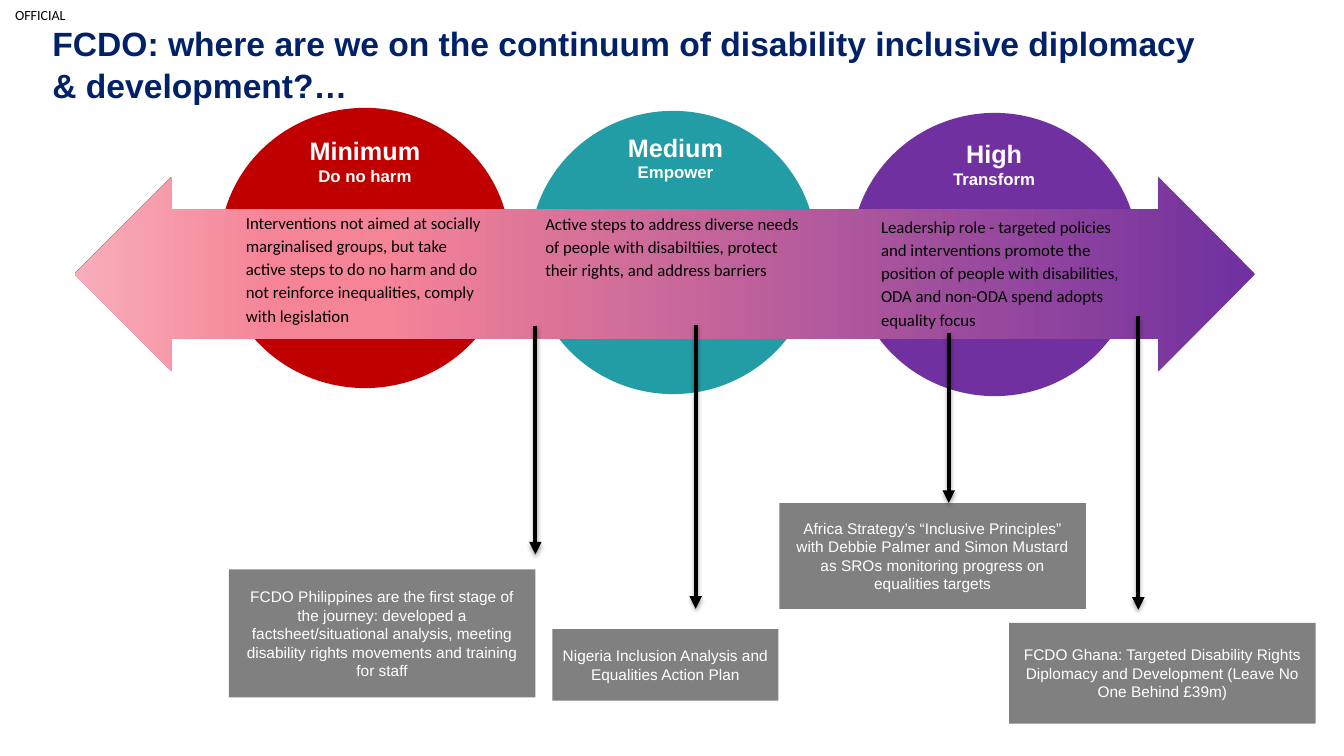
from dataclasses import dataclass

from lxml import etree
from pptx import Presentation
from pptx import util as u
from pptx.dml import color
from pptx.enum import shapes, text
from pptx.oxml import ns


@dataclass(frozen=True)
class Theme:
    navy: str = "012169"
    black: str = "000000"
    white: str = "FFFFFF"
    grey: str = "808080"
    red: str = "C00000"
    teal: str = "229DA6"
    purple: str = "7030A0"
    arrow_stops: tuple = ((0, "7030A0"), (74, "F58497"), (83, "F58497"), (100, "F8ADBA"))
    heading_font: str = "Arial"
    body_font: str = "Calibri"
    title_size: int = 24
    stage_size: int = 18
    body_size: int = 12
    example_size: int = 11
    marking_size: int = 10


@dataclass(frozen=True)
class Box:
    left: float
    top: float
    width: float
    height: float

    def inner(self, left, top, width, height):
        """Return a box whose offset is measured from this box."""
        return Box(self.left + left, self.top + top, width, height)

    def lengths(self):
        return [u.Inches(v) for v in (self.left, self.top, self.width, self.height)]


THEME = Theme()

# Name, aim, colour, circle, heading position, caption box, caption
STAGES = [
    ("Minimum", "Do no harm", THEME.red, (1.44, 0, 2.88, 2.78), (2.01, 0.22),
     (1.6, 0.96, 2.57, 1.35),
     "Interventions not aimed at socially marginalised groups, but take active steps "
     "to do no harm and do not reinforce inequalities, comply with legislation"),
    ("Medium", "Empower", THEME.teal, (4.51, 0.03, 2.85, 2.81), (5.09, 0.19),
     (4.57, 0.97, 2.85, 1.51),
     "Active steps to address diverse needs of people with disabiltiies, "
     "protect their rights, and address barriers"),
    ("High", "Transform", THEME.purple, (7.7, 0.05, 2.85, 2.81), (8.25, 0.25),
     (7.9, 1, 2.76, 1.58),
     "Leadership role - targeted policies and interventions promote the position of "
     "people with disabilities, ODA and non-ODA spend adopts equality focus"),
]

# Text, box, arrow x, arrow start, arrow end
EXAMPLES = [
    ("FCDO Philippines are the first stage of the journey: developed a "
     "factsheet/situational analysis, meeting disability rights movements and "
     "training for staff", (0, 2.51, 3.04, 1.27), 3.04, 0.09, 2.36),
    ("Nigeria Inclusion Analysis and Equalities Action Plan",
     (3.21, 3.1, 2.24, 0.71), 4.63, 0.08, 2.9),
    ("Africa Strategy’s “Inclusive Principles” with Debbie Palmer and Simon Mustard "
     "as SROs monitoring progress on equalities targets",
     (5.46, 1.85, 3.04, 1.05), 7.14, 0.16, 1.85),
    ("FCDO Ghana: Targeted Disability Rights Diplomacy and Development "
     "(Leave No One Behind £39m)", (7.74, 3.04, 3.04, 1), 9.02, 0, 2.91),
]


def rgb(value):
    return color.RGBColor.from_string(value)


def add_xml(parent, tag, **attributes):
    return etree.SubElement(parent, ns.qn(tag), {k: str(v) for k, v in attributes.items()})


def write_text(shape, lines, *, sizes, colour, font=THEME.heading_font, bold=False,
               align=text.PP_ALIGN.LEFT, anchor=text.MSO_ANCHOR.TOP, inset=None,
               wrap=True, line_spacing=None, space_after=None):
    frame = shape.text_frame
    frame.text = "\n".join(lines)
    frame.word_wrap = wrap
    frame.vertical_anchor = anchor
    if inset is not None:
        frame.margin_left = frame.margin_right = u.Inches(inset)
        frame.margin_top = frame.margin_bottom = u.Inches(inset)
    for paragraph, size in zip(frame.paragraphs, sizes):
        paragraph.alignment = align
        if line_spacing is not None:
            paragraph.line_spacing = line_spacing
        if space_after is not None:
            paragraph.space_after = u.Pt(space_after)
        paragraph.font.name = font
        paragraph.font.size = u.Pt(size)
        paragraph.font.bold = bold
        paragraph.font.color.rgb = rgb(colour)


def add_text(slide, box, lines, **text_format):
    write_text(slide.shapes.add_textbox(*box.lengths()), lines, **text_format)


def add_plain_shape(slide, kind, box, fill=None):
    shape = slide.shapes.add_shape(kind, *box.lengths())
    shape.shadow.inherit = False
    shape.line.fill.background()
    if fill:
        shape.fill.solid()
        shape.fill.fore_color.rgb = rgb(fill)
    return shape


def add_down_arrow(slide, x, start, end):
    arrow = slide.shapes.add_connector(
        shapes.MSO_CONNECTOR.STRAIGHT, u.Inches(x), u.Inches(start), u.Inches(x), u.Inches(end))
    arrow.line.color.rgb = rgb(THEME.black)
    arrow.line.width = u.Pt(3)
    properties = arrow._element.spPr
    add_xml(properties.find(ns.qn("a:ln")), "a:tailEnd", type="triangle")
    shadow = add_xml(add_xml(properties, "a:effectLst"), "a:outerShdw",
                     blurRad=u.Pt(3.1), dist=u.Pt(1.8), dir=90 * 60000, rotWithShape=0)
    add_xml(add_xml(shadow, "a:srgbClr", val=THEME.black), "a:alpha", val=35000)


def add_continuum_arrow(slide, box):
    arrow = add_plain_shape(slide, shapes.MSO_SHAPE.LEFT_RIGHT_ARROW, box)
    arrow.adjustments[0] = 0.67
    arrow.adjustments[1] = 0.5
    arrow.fill.gradient()
    arrow.fill.gradient_angle = 180
    stops = arrow._element.spPr.find(".//" + ns.qn("a:gsLst"))
    stops.clear()
    for position, value in THEME.arrow_stops:
        add_xml(add_xml(stops, "a:gs", pos=position * 1000), "a:srgbClr", val=value)


def draw_header(slide, box):
    add_text(slide, box.inner(0, 0, 0.8, 0.29), ["OFFICIAL"], sizes=[THEME.marking_size],
             colour=THEME.black, font=THEME.body_font, inset=0, wrap=False,
             align=text.PP_ALIGN.CENTER, anchor=text.MSO_ANCHOR.MIDDLE)
    add_text(slide, box.inner(0.52, 0.2, 11.5, 0.9),
             ["FCDO: where are we on the continuum of disability inclusive diplomacy "
              "& development?…"],
             sizes=[THEME.title_size], colour=THEME.navy, bold=True, inset=0,
             line_spacing=1.06)


def draw_continuum(slide, box):
    """Draw the stage circles, the arrow across them and the stage texts."""
    for _, _, fill, circle, _, _, _ in STAGES:
        add_plain_shape(slide, shapes.MSO_SHAPE.OVAL, box.inner(*circle), fill)
    add_continuum_arrow(slide, box.inner(0, 0.69, box.width, 1.92))
    for name, aim, _, _, heading, caption_box, caption in STAGES:
        add_text(slide, box.inner(*caption_box), [caption], sizes=[THEME.body_size],
                 colour=THEME.black, font=THEME.body_font, line_spacing=1.15, space_after=10)
        add_text(slide, box.inner(*heading, 1.74, 0.61), [name, aim],
                 sizes=[THEME.stage_size, THEME.body_size], colour=THEME.white,
                 bold=True, align=text.PP_ALIGN.CENTER)


def draw_examples(slide, box):
    """Draw the country examples and the arrows that lead down to them."""
    for wording, place, x, start, end in EXAMPLES:
        card = add_plain_shape(slide, shapes.MSO_SHAPE.RECTANGLE, box.inner(*place), THEME.grey)
        write_text(card, [wording], sizes=[THEME.example_size], colour=THEME.white,
                   align=text.PP_ALIGN.CENTER, anchor=text.MSO_ANCHOR.MIDDLE)
        add_down_arrow(slide, box.left + x, box.top + start, box.top + end)


def main():
    presentation = Presentation()
    presentation.slide_width = u.Inches(13.33)
    presentation.slide_height = u.Inches(7.5)
    slide = presentation.slides.add_slide(presentation.slide_layouts[6])
    draw_header(slide, Box(0, 0, 13.33, 1.1))
    draw_continuum(slide, Box(0.74, 1.07, 11.71, 2.86))
    draw_examples(slide, Box(2.27, 3.14, 10.78, 4.04))
    presentation.save("out.pptx")


if __name__ == "__main__":
    main()
